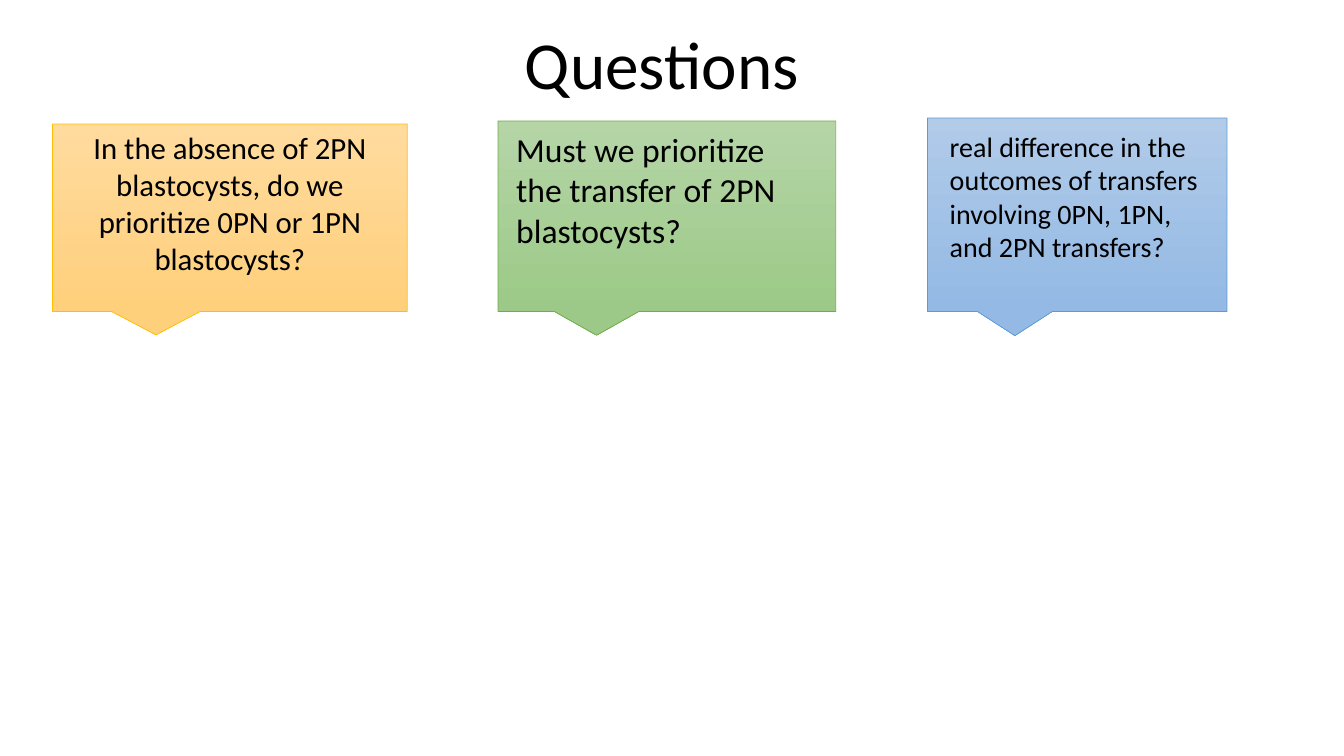
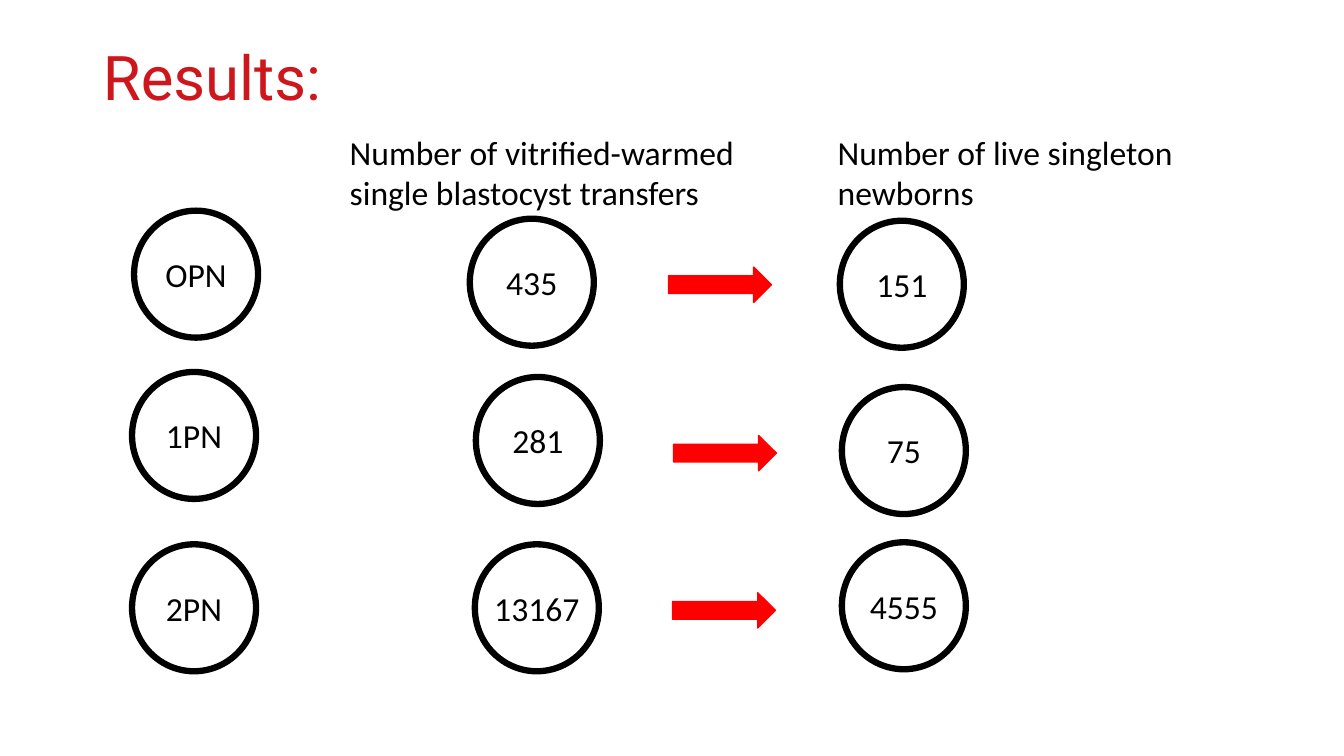
"""Build the Questions and Results slides on embryo transfers."""
from pptx import Presentation
from pptx.dml.color import RGBColor as Rgb
from pptx.enum.shapes import MSO_SHAPE as Kind
from pptx.enum.text import MSO_ANCHOR as Anchor, MSO_AUTO_SIZE as Fit, PP_ALIGN as Align
from pptx.util import Inches, Pt

COLORS = {"ink": "000000", "title": "CD171C", "arrow": "FF0000"}
FONT = "Calibri"
NOTES = [
    {"text": "In the absence of 2PN blastocysts, do we prioritize 0PN or 1PN blastocysts?",
     "box": (0.52, 1.23, 3.52, 1.86), "pads": (0.1, 0.05, 0.1), "size": 22,
     "align": Align.CENTER, "fill": ("FFDB9E", "FFD07C"), "line": "FFC000"},
    {"text": "Must we prioritize the transfer of 2PN blastocysts?",
     "box": (4.94, 1.2, 3.35, 1.89), "pads": (0.18, 0.08, 0.22), "size": 24,
     "align": Align.LEFT, "fill": ("B5D5A7", "9CC987"), "line": "70AD47"},
    {"text": "real difference in the outcomes of transfers involving 0PN, 1PN, and 2PN transfers?",
     "box": (9.2, 1.17, 2.97, 1.92), "pads": (0.22, 0.11, 0.1), "size": 20,
     "align": Align.LEFT, "fill": ("B1CBE9", "93B9E4"), "line": "5B9BD5"},
]
HEADS = [
    ("Number of vitrified-warmed single blastocyst transfers", (3.37, 1.26, 4.03, 0.9)),
    ("Number of live singleton newborns", (8.21, 1.26, 4.83, 0.9)),
]
RINGS = [
    ("OPN", 1.33, 2.09), ("435", 4.66, 2.17), ("151", 8.33, 2.19),
    ("1PN", 1.31, 3.69), ("281", 4.72, 3.74), ("75", 8.35, 3.84),
    ("2PN", 1.31, 5.4), ("13167", 4.71, 5.4), ("4555", 8.35, 5.38),
]
ARROWS = [(6.63, 2.65), (6.68, 4.32), (6.67, 5.88)]
RING = (1.23, 1.26)
ARROW = (1.02, 0.35)


def color(name):
    return Rgb.from_string(COLORS.get(name, name))


def write(shape, text, size, align=Align.LEFT, anchor=Anchor.TOP, ink="ink", font=FONT):
    frame = shape.text_frame
    frame.text = text
    frame.word_wrap = True
    frame.auto_size = Fit.NONE
    frame.vertical_anchor = anchor
    para = frame.paragraphs[0]
    para.alignment = align
    para.font.size = Pt(size)
    para.font.name = font
    para.font.color.rgb = color(ink)
    return frame


def add_slide(deck, text, box, size, **style):
    slide = deck.slides.add_slide(deck.slide_layouts[5])
    title = slide.shapes.title
    title.left, title.top, title.width, title.height = map(Inches, box)
    write(title, text, size, anchor=Anchor.MIDDLE, **style)
    title.text_frame.paragraphs[0].line_spacing = 0.9
    return slide


def add_shape(slide, kind, box, line, width):
    shape = slide.shapes.add_shape(kind, *map(Inches, box))
    shape.shadow.inherit = False
    shape.line.color.rgb = color(line)
    shape.line.width = Pt(width)
    return shape


def add_note(slide, note):
    shape = add_shape(slide, Kind.RECTANGULAR_CALLOUT, note["box"], note["line"], 0.5)
    shape.fill.gradient()
    shape.fill.gradient_angle = 270
    for stop, tone in zip(shape.fill.gradient_stops, note["fill"]):
        stop.color.rgb = color(tone)
    frame = write(shape, note["text"], note["size"], note["align"])
    frame.margin_left, frame.margin_top, frame.margin_right = map(Inches, note["pads"])


def add_ring(slide, text, left, top):
    ring = add_shape(slide, Kind.OVAL, (left, top, *RING), "ink", 4.5)
    ring.fill.background()
    frame = write(ring, text, 24, Align.CENTER, Anchor.MIDDLE)
    frame.word_wrap = False
    frame.margin_left = frame.margin_right = 0


def add_arrow(slide, left, top):
    arrow = add_shape(slide, Kind.RIGHT_ARROW, (left, top, *ARROW), "arrow", 1)
    arrow.fill.solid()
    arrow.fill.fore_color.rgb = color("arrow")


def main():
    deck = Presentation()
    deck.slide_width, deck.slide_height = Inches(13.33), Inches(7.5)

    slide = add_slide(deck, "Questions", (0.23, 0.26, 12.67, 0.83), 48, align=Align.CENTER)
    for note in NOTES:
        add_note(slide, note)

    slide = add_slide(deck, "Results:", (0.92, 0.43, 11.5, 0.74), 44, ink="title", font="Roboto")
    for text, box in HEADS:
        write(slide.shapes.add_textbox(*map(Inches, box)), text, 24)
    for ring in RINGS:
        add_ring(slide, *ring)
    for arrow in ARROWS:
        add_arrow(slide, *arrow)

    deck.save("out.pptx")


if __name__ == "__main__":
    main()
